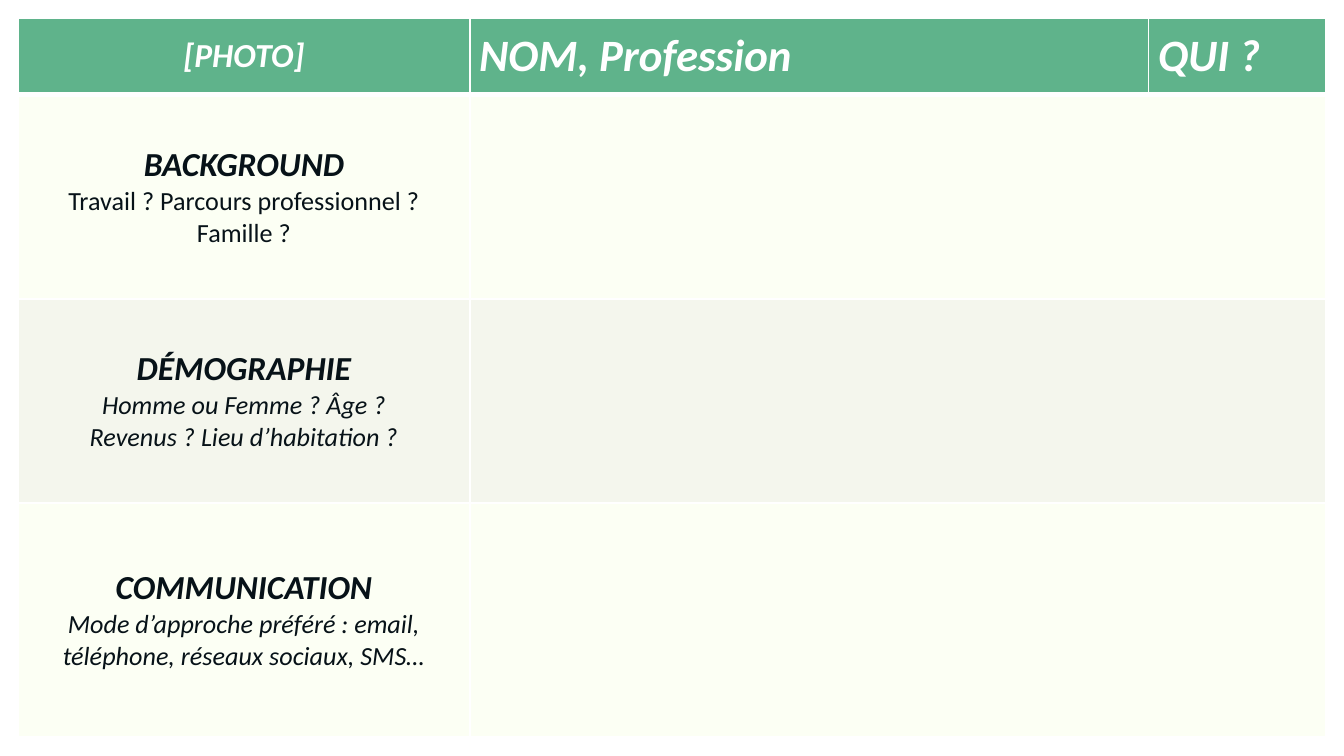
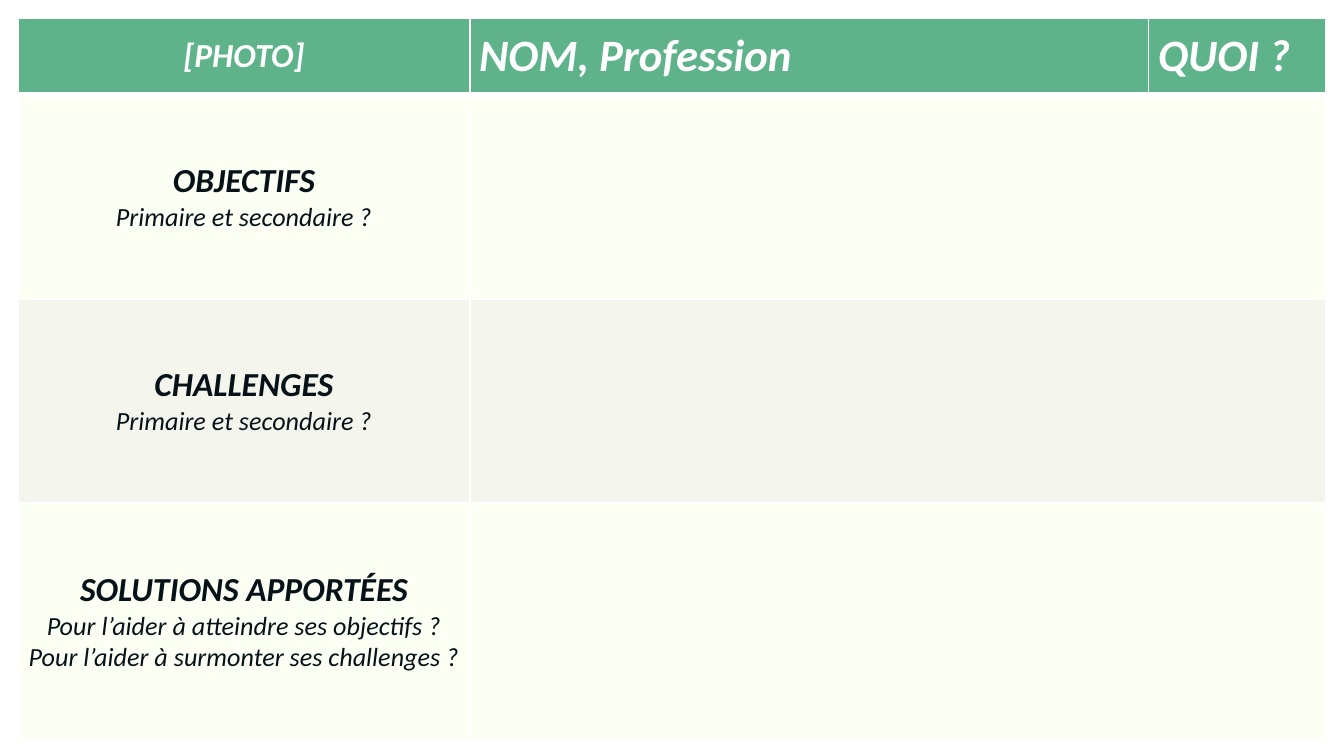
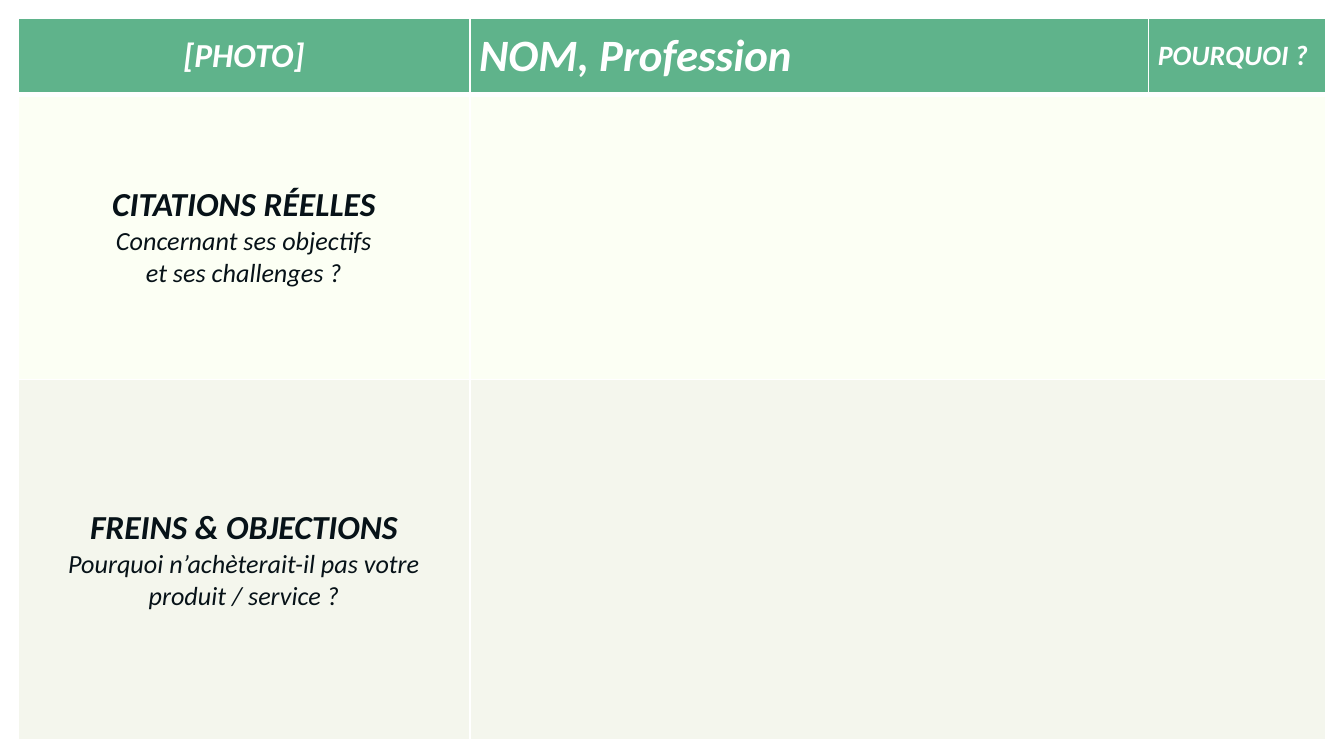
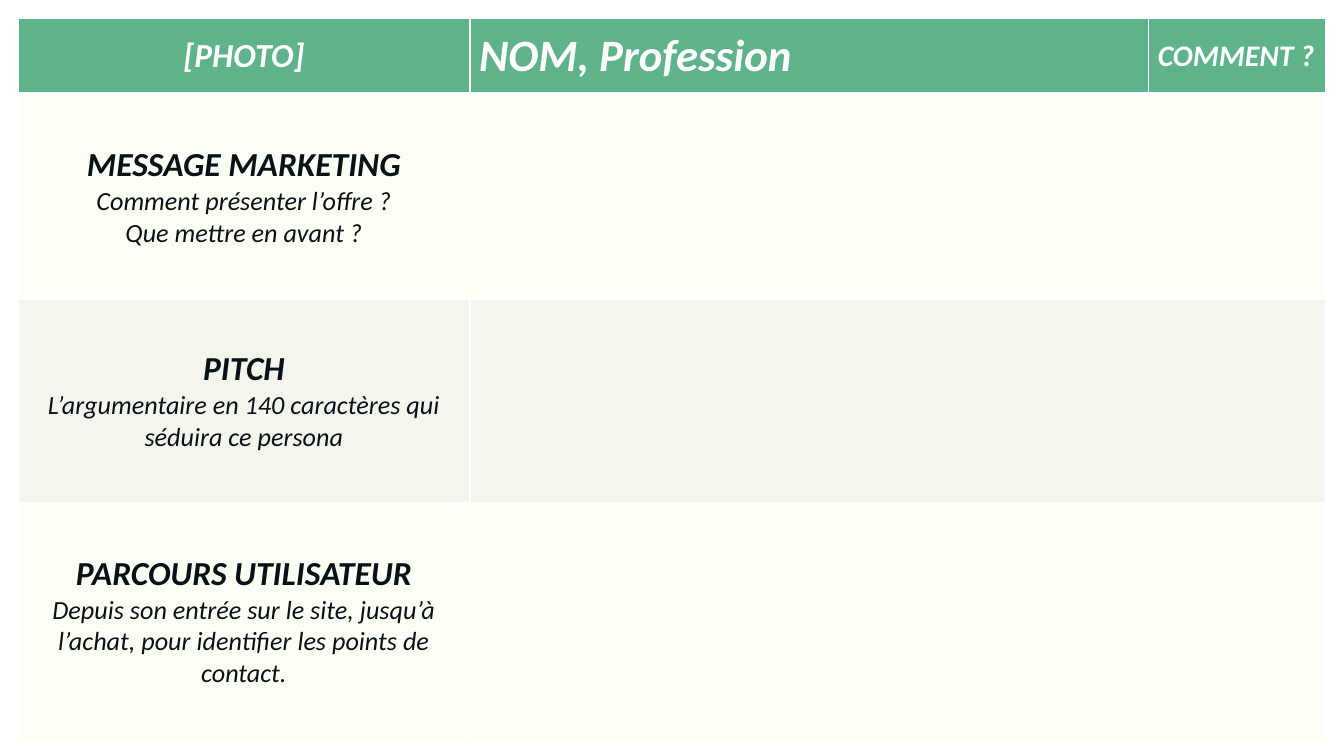
from dataclasses import dataclass

import pptx
import pptx.dml.color
import pptx.enum.text
import pptx.oxml
import pptx.oxml.ns
import pptx.presentation
import pptx.table
import pptx.util
from pptx.util import Inches

FONT = "Calibri"
WHITE = "FFFFFF"
GREEN = "5FB38B"
INK = "071218"
BANDS = ("FCFFF4", "F4F6ED")
SLIDE_WIDTH = Inches(10)
SLIDE_HEIGHT = SLIDE_WIDTH * 9 // 16
COLUMN_WIDTHS = (Inches(3.36), Inches(5.05), Inches(1.32))
MARGIN = (SLIDE_WIDTH - sum(COLUMN_WIDTHS)) // 2
PADDING = Inches(0.07)
HEADER_HEIGHT = Inches(0.57)
THIN, THICK = 1, 3
CENTER = pptx.enum.text.PP_ALIGN.CENTER
LEFT = pptx.enum.text.PP_ALIGN.LEFT


@dataclass(frozen=True)
class Line:
    text: str
    size: int
    color: str = INK
    bold: bool = False
    italic: bool = True
    align: pptx.enum.text.PP_ALIGN = CENTER


@dataclass(frozen=True)
class Topic:
    title: str
    hints: tuple[str, ...]
    height: float
    italic: bool = True


@dataclass(frozen=True)
class PersonaSheet:
    question: str
    question_size: int
    topics: tuple[Topic, ...]


SHEETS = (
    PersonaSheet("QUI ?", 24, (
        Topic("BACKGROUND", ("Travail ? Parcours professionnel ? Famille ?",), 1.52, italic=False),
        Topic("DÉMOGRAPHIE", ("Homme ou Femme ? Âge ?\nRevenus ? Lieu d’habitation ?",), 1.52),
        Topic("COMMUNICATION",
              ("Mode d’approche préféré : email, téléphone, réseaux sociaux, SMS…",), 1.74),
    )),
    PersonaSheet("QUOI ?", 24, (
        Topic("OBJECTIFS", ("Primaire et secondaire ?",), 1.52),
        Topic("CHALLENGES", ("Primaire et secondaire ?",), 1.52),
        Topic("SOLUTIONS APPORTÉES",
              ("Pour l’aider à atteindre ses objectifs ?",
               "Pour l’aider à surmonter ses challenges ?"), 1.76),
    )),
    PersonaSheet("POURQUOI ?", 15, (
        Topic("CITATIONS RÉELLES", ("Concernant ses objectifs\net ses challenges ?",), 2.12),
        Topic("FREINS & OBJECTIONS",
              ("Pourquoi n’achèterait-il pas votre produit / service ?",), 2.68),
    )),
    PersonaSheet("COMMENT ?", 16, (
        Topic("MESSAGE MARKETING", ("Comment présenter l’offre ?\nQue mettre en avant ?",), 1.52),
        Topic("PITCH", ("L’argumentaire en 140 caractères qui séduira ce persona",), 1.52),
        Topic("PARCOURS UTILISATEUR",
              ("Depuis son entrée sur le site, jusqu’à l’achat, "
               "pour identifier les points de contact.",), 1.76),
    )),
)


def rgb(value: str) -> pptx.dml.color.RGBColor:
    return pptx.dml.color.RGBColor.from_string(value)


def set_borders(cell: pptx.table._Cell, top: int, bottom: int) -> None:
    """Draw white borders, with top and bottom widths in points."""
    tc_pr = cell._tc.get_or_add_tcPr()
    for side, width in (("L", THIN), ("R", THIN), ("T", top), ("B", bottom)):
        tc_pr.append(pptx.oxml.parse_xml(
            f'<a:ln{side} {pptx.oxml.ns.nsdecls("a")} w="{pptx.util.Pt(width)}">'
            f'<a:solidFill><a:srgbClr val="{WHITE}"/></a:solidFill></a:ln{side}>'))


def format_cell(cell: pptx.table._Cell, fill: str, top: int = THIN, bottom: int = THIN) -> None:
    set_borders(cell, top, bottom)
    cell.fill.solid()
    cell.fill.fore_color.rgb = rgb(fill)
    cell.vertical_anchor = pptx.enum.text.MSO_ANCHOR.MIDDLE
    cell.margin_left = cell.margin_right = cell.margin_top = cell.margin_bottom = PADDING


def write_lines(cell: pptx.table._Cell, lines: list[Line]) -> None:
    tf = cell.text_frame
    for i, line in enumerate(lines):
        p = tf.add_paragraph() if i else tf.paragraphs[0]
        p.text = line.text
        p.alignment = line.align
        font = p.font
        font.name = FONT
        font.size = pptx.util.Pt(line.size)
        font.bold = line.bold
        font.italic = line.italic
        font.color.rgb = rgb(line.color)


def add_sheet(prs: pptx.presentation.Presentation, sheet: PersonaSheet) -> None:
    s = prs.slides.add_slide(prs.slide_layouts[6])
    heights = [HEADER_HEIGHT] + [Inches(topic.height) for topic in sheet.topics]
    table = s.shapes.add_table(len(heights), len(COLUMN_WIDTHS), MARGIN, MARGIN,
                               sum(COLUMN_WIDTHS), sum(heights)).table
    table.horz_banding = False
    for column, width in zip(table.columns, COLUMN_WIDTHS):
        column.width = width
    for row, height in zip(table.rows, heights):
        row.height = height

    headers = (
        Line("[PHOTO]", 18, WHITE, bold=True),
        Line("NOM, Profession", 24, WHITE, bold=True, align=LEFT),
        Line(sheet.question, sheet.question_size, WHITE, bold=True, align=LEFT),
    )
    for cell, header in zip(table.rows[0].cells, headers):
        format_cell(cell, GREEN, bottom=THICK)
        write_lines(cell, [header])

    for i, topic in enumerate(sheet.topics, start=1):
        for cell in table.rows[i].cells:
            format_cell(cell, BANDS[(i - 1) % 2], top=THICK if i == 1 else THIN)
        table.cell(i, 1).merge(table.cell(i, 2))
        title = Line(topic.title, 18, bold=True)
        hints = [Line(hint, 14, italic=topic.italic) for hint in topic.hints]
        write_lines(table.cell(i, 0), [title, *hints])


def main() -> None:
    prs = pptx.Presentation()
    prs.slide_width, prs.slide_height = SLIDE_WIDTH, SLIDE_HEIGHT
    for sheet in SHEETS:
        add_sheet(prs, sheet)
    prs.save("out.pptx")


if __name__ == "__main__":
    main()
